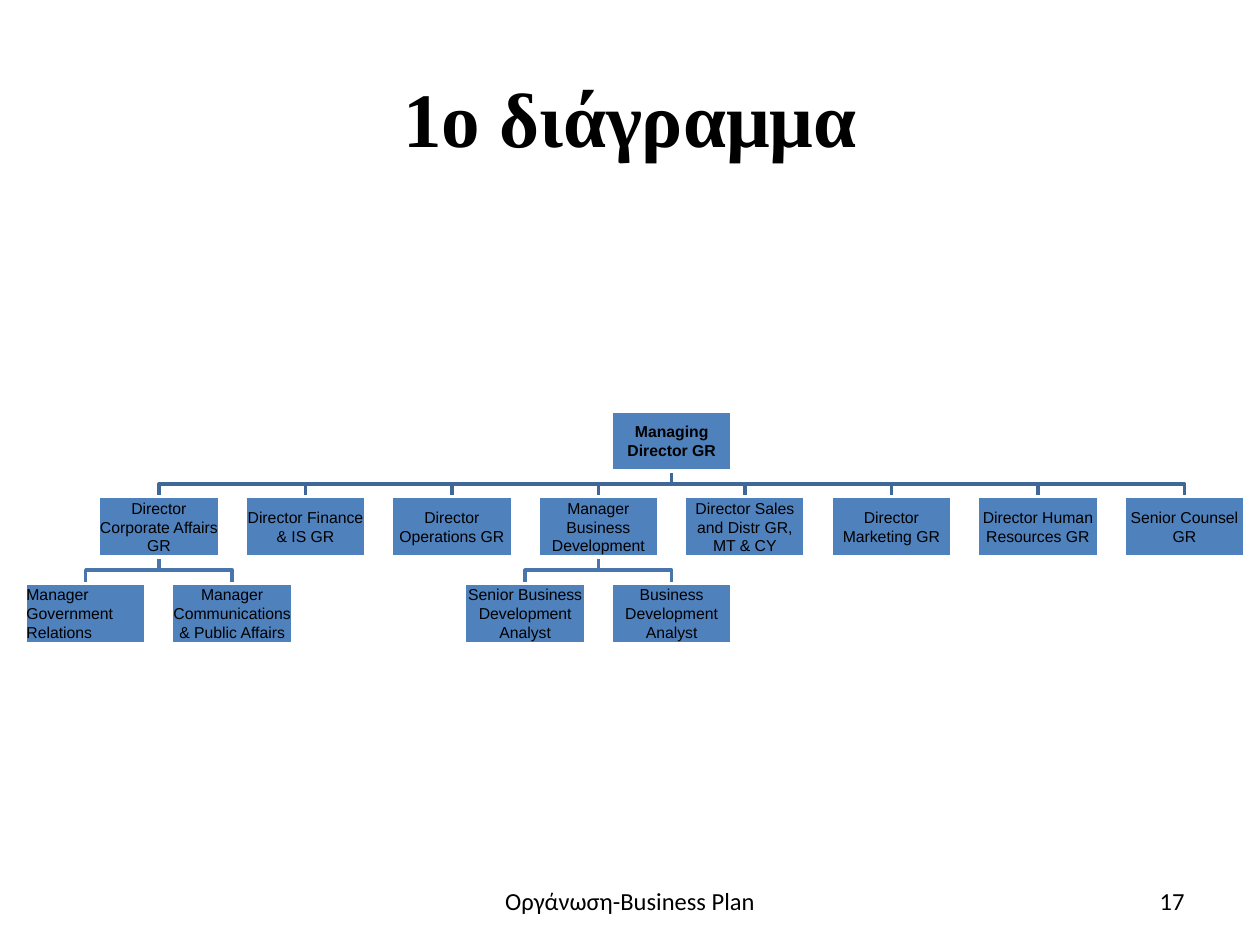
from pptx import Presentation
from pptx.dml.color import RGBColor
from pptx.enum.shapes import MSO_SHAPE
from pptx.enum.text import MSO_ANCHOR, PP_ALIGN
from pptx.util import Inches, Pt

# Chart grid: boxes are centred on half-column slots
FIRST_CENTER = 0.68
SLOT = 8.72 / 15
BOX_WIDTH, BOX_HEIGHT = 0.96, 0.48
LEVEL_TOPS = [3.26, 3.94, 4.63]
LINE_COLORS = ["3F6797", "4875AC"]

# Each position: label, slot, subordinates
ORGANISATION = ("Managing Director GR", 8, [
    ("Director Corporate Affairs GR", 1, [
        ("Manager Government Relations", 0, []),
        ("Manager Communications & Public Affairs", 2, []),
    ]),
    ("Director Finance & IS GR", 3, []),
    ("Director Operations GR", 5, []),
    ("Manager Business Development", 7, [
        ("Senior Business Development Analyst", 6, []),
        ("Business Development Analyst", 8, []),
    ]),
    ("Director Sales and Distr GR, MT & CY", 9, []),
    ("Director Marketing GR", 11, []),
    ("Director Human Resources GR", 13, []),
    ("Senior Counsel GR", 15, []),
])


def color(value):
    return RGBColor.from_string(value)


def center_of(slot):
    return FIRST_CENTER + slot * SLOT


def write_text(shape, text, font_name, size, bold=False, align=PP_ALIGN.CENTER):
    frame = shape.text_frame
    frame.word_wrap = True
    frame.vertical_anchor = MSO_ANCHOR.MIDDLE
    paragraph = frame.paragraphs[0]
    paragraph.text = text
    paragraph.alignment = align
    font = paragraph.font
    font.name, font.size, font.bold = font_name, Pt(size), bold
    font.color.rgb = color("000000")


def add_branch(slide, level, parent_slot, child_slot):
    top = LEVEL_TOPS[level] + BOX_HEIGHT
    bottom = LEVEL_TOPS[level + 1]
    middle = (top + bottom) / 2
    start, end = center_of(parent_slot), center_of(child_slot)
    builder = slide.shapes.build_freeform(Inches(start), Inches(top))
    builder.add_line_segments(
        [(Inches(x), Inches(y))
         for x, y in [(start, middle), (end, middle), (end, bottom)]],
        close=False)
    shape = builder.convert_to_shape()
    shape.shadow.inherit = False
    shape.fill.background()
    shape.line.color.rgb = color(LINE_COLORS[level])
    shape.line.width = Pt(2)


def add_branches(slide, position, level=0):
    _, slot, subordinates = position
    for subordinate in subordinates:
        add_branch(slide, level, slot, subordinate[1])
        add_branches(slide, subordinate, level + 1)


def add_boxes(slide, position, level=0):
    label, slot, subordinates = position
    shape = slide.shapes.add_shape(
        MSO_SHAPE.RECTANGLE,
        Inches(center_of(slot) - BOX_WIDTH / 2), Inches(LEVEL_TOPS[level]),
        Inches(BOX_WIDTH), Inches(BOX_HEIGHT))
    shape.shadow.inherit = False
    shape.fill.solid()
    shape.fill.fore_color.rgb = color("4F81BD")
    shape.line.color.rgb = color("FFFFFF")
    shape.line.width = Pt(2)
    frame = shape.text_frame
    frame.margin_left = frame.margin_right = Inches(0.01)
    frame.margin_top = frame.margin_bottom = Inches(0.01)
    # Only the leftmost box is left-aligned
    align = PP_ALIGN.LEFT if slot == 0 else PP_ALIGN.CENTER
    write_text(shape, label, "Arial", 9, bold=level == 0, align=align)
    for subordinate in subordinates:
        add_boxes(slide, subordinate, level + 1)


def add_title(slide, text):
    title = slide.shapes.title
    title.left, title.top = Inches(0.5), Inches(0.3)
    title.width, title.height = Inches(9), Inches(1.25)
    write_text(title, text, "Times New Roman", 44, bold=True)


def add_footer(slide, text, left, width, align):
    box = slide.shapes.add_textbox(
        Inches(left), Inches(6.95), Inches(width), Inches(0.4))
    write_text(box, text, "Calibri", 14, align=align)


def main():
    presentation = Presentation()
    presentation.slide_width = Inches(10)
    presentation.slide_height = Inches(7.5)
    slide = presentation.slides.add_slide(presentation.slide_layouts[5])

    add_title(slide, "1ο διάγραμμα")

    # Organisation chart, lines behind boxes
    add_branches(slide, ORGANISATION)
    add_boxes(slide, ORGANISATION)

    # Footer and slide number
    add_footer(slide, "Οργάνωση-Business Plan", 3.34, 3.32, PP_ALIGN.CENTER)
    add_footer(slide, "17", 7.17, 2.33, PP_ALIGN.RIGHT)

    presentation.save("out.pptx")


if __name__ == "__main__":
    main()
